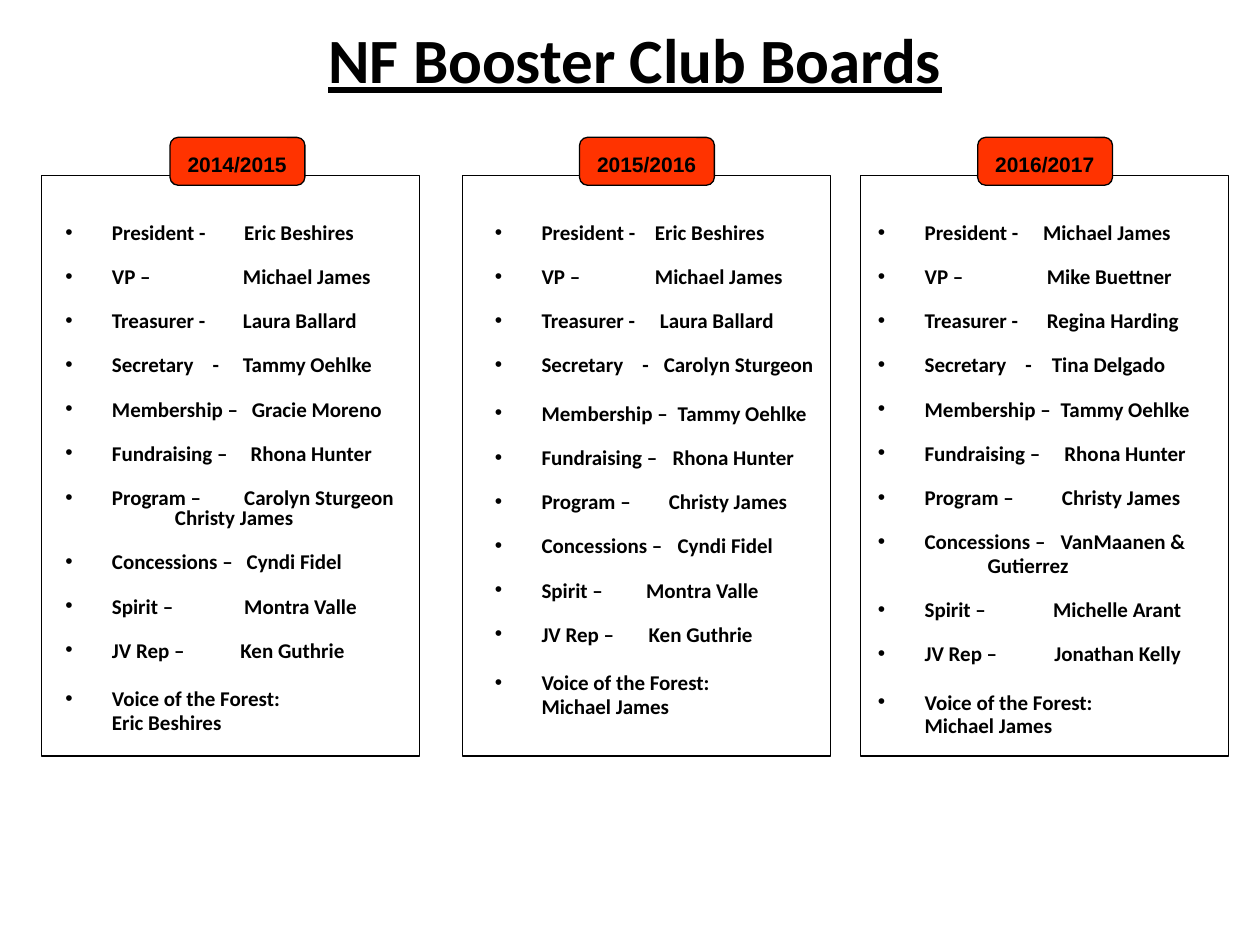
from lxml import etree
from pptx import Presentation
from pptx import util as u
from pptx.dml.color import RGBColor
from pptx.enum import shapes, text
from pptx.oxml import ns

Inches, Pt = u.Inches, u.Pt
COLORS = {"ink": "000000", "badge": "FF3300"}
BULLET_INDENT = 0.37
DASH_STOP = 1.17
ROW_GAP, WIDE_GAP = 13.75, 16.1

BOARDS = [
    {"year": "2014/2015", "frame": (0.33, 1.39, 3, 4.61), "badge": (1.35, 1.09, 1.07, 0.38),
     "list": (0.42, 1.5, 3.13, 3.5), "voice": "Eric Beshires", "rows": [
        ("President -", "Eric Beshires", 1.42, 0),
        ("VP –", "Michael James", 1.41, ROW_GAP),
        ("Treasurer -", "Laura Ballard", 1.41, ROW_GAP),
        ("Secretary\t-", "Tammy Oehlke", 1.41, ROW_GAP),
        ("Membership –", "Gracie Moreno", 1.48, ROW_GAP),
        ("Fundraising –", "Rhona Hunter", 1.47, ROW_GAP),
        ("Program –", "Carolyn Sturgeon", 1.42, ROW_GAP),
        ("", "Christy James", 1.42, 0),
        ("Concessions –", "Cyndi Fidel", 1.44, ROW_GAP),
        ("Spirit –", "Montra Valle", 1.42, ROW_GAP),
        ("JV Rep –", "Ken Guthrie", 1.39, ROW_GAP)]},
    {"year": "2015/2016", "frame": (3.67, 1.39, 2.92, 4.61), "badge": (4.6, 1.09, 1.07, 0.38),
     "list": (3.83, 1.5, 3.13, 3.5), "voice": "Michael James", "rows": [
        ("President -", "Eric Beshires", 1.27, 0),
        ("VP –", "Michael James", 1.27, ROW_GAP),
        ("Treasurer -", "Laura Ballard", 1.31, ROW_GAP),
        ("Secretary\t-", "Carolyn Sturgeon", 1.34, ROW_GAP),
        ("Membership –", "Tammy Oehlke", 1.45, WIDE_GAP),
        ("Fundraising –", "Rhona Hunter", 1.41, ROW_GAP),
        ("Program –", "Christy James", 1.38, ROW_GAP),
        ("Concessions –", "Cyndi Fidel", 1.45, ROW_GAP),
        ("Spirit –", "Montra Valle", 1.2, ROW_GAP),
        ("JV Rep –", "Ken Guthrie", 1.22, ROW_GAP)]},
    {"year": "2016/2017", "frame": (6.83, 1.39, 2.92, 4.61), "badge": (7.76, 1.09, 1.07, 0.38),
     "list": (6.87, 1.5, 3.13, 3.5), "voice": "Michael James", "rows": [
        ("President -", "Michael James", 1.31, 0),
        ("VP –", "Mike Buettner", 1.34, ROW_GAP),
        ("Treasurer -", "Regina Harding", 1.34, ROW_GAP),
        ("Secretary\t-", "Tina Delgado", 1.38, ROW_GAP),
        ("Membership –", "Tammy Oehlke", 1.45, ROW_GAP),
        ("Fundraising –", "Rhona Hunter", 1.48, ROW_GAP),
        ("Program –", "Christy James", 1.46, ROW_GAP),
        ("Concessions –", "VanMaanen &", 1.45, ROW_GAP),
        ("", "Gutierrez", 1.39, 2),
        ("Spirit –", "Michelle Arant", 1.39, ROW_GAP),
        ("JV Rep –", "Jonathan Kelly", 1.4, ROW_GAP)]},
]


def inches(box):
    return [Inches(length) for length in box]


def color(name):
    return RGBColor.from_string(COLORS[name])


def style_runs(para, font, size, underline=None):
    for span in para.runs:
        span.font.name = font
        span.font.size = Pt(size)
        span.font.bold = True
        span.font.underline = underline
        span.font.color.rgb = color("ink")


def add_text(page, box):
    frame = page.shapes.add_textbox(*inches(box)).text_frame
    frame.word_wrap = True
    return frame


def add_outlined(page, kind, box, fill=None):
    shape = page.shapes.add_shape(kind, *inches(box))
    shape.shadow.inherit = False
    if fill:
        shape.fill.solid()
        shape.fill.fore_color.rgb = color(fill)
    else:
        shape.fill.background()
    shape.line.color.rgb = color("ink")
    shape.line.width = Pt(0.75)


def add_title(page, box):
    frame = add_text(page, box)
    frame.vertical_anchor = text.MSO_ANCHOR.MIDDLE
    frame.text = "NF Booster Club Boards"
    para = frame.paragraphs[0]
    para.alignment = text.PP_ALIGN.CENTER
    style_runs(para, "Calibri", 36, True)


def add_badge(page, box, year):
    add_outlined(page, shapes.MSO_SHAPE.ROUNDED_RECTANGLE, box, "badge")
    left, top, width, _ = box
    frame = add_text(page, (left + 0.04, top + 0.06, width - 0.04, 0.3))
    frame.text = year
    style_runs(frame.paragraphs[0], "Arial", 12)


def format_row(para, gap, bulleted, stops):
    para.line_spacing = 0.8
    para.space_before = Pt(gap)
    props = para._p.get_or_add_pPr()
    props.set("marL", str(Inches(BULLET_INDENT)))
    props.set("indent", str(-Inches(BULLET_INDENT) if bulleted else 0))
    if bulleted:
        etree.SubElement(props, ns.qn("a:buFont"), typeface="Arial")
        etree.SubElement(props, ns.qn("a:buChar"), char="•")
    if stops:
        tabs = etree.SubElement(props, ns.qn("a:tabLst"))
        for stop in stops:
            etree.SubElement(tabs, ns.qn("a:tab"), pos=str(Inches(stop)), algn="l")
    style_runs(para, "Calibri", 12)


def add_members(page, box, rows, voice):
    frame = add_text(page, box)
    frame.margin_top = Inches(0.28)
    lines = []
    for role, name, stop, gap in rows:
        stops = [DASH_STOP, stop] if "\t" in role else [stop]
        lines.append((f"{role}\t{name}", gap, bool(role), stops))
    lines.append(("Voice of the Forest:", WIDE_GAP, True, []))
    lines.append((voice, 2, False, []))
    for index, (line, gap, bulleted, stops) in enumerate(lines):
        para = frame.add_paragraph() if index else frame.paragraphs[0]
        para.text = line
        format_row(para, gap, bulleted, stops)


def add_board(page, board):
    add_outlined(page, shapes.MSO_SHAPE.RECTANGLE, board["frame"])
    add_badge(page, board["badge"], board["year"])
    add_members(page, board["list"], board["rows"], board["voice"])


def main():
    deck = Presentation()
    deck.slide_width, deck.slide_height = Inches(10), Inches(7.5)
    page = deck.slides.add_slide(deck.slide_layouts[6])
    add_title(page, (0.54, -0.16, 9, 1.25))
    for board in BOARDS:
        add_board(page, board)
    deck.save("out.pptx")


if __name__ == "__main__":
    main()
